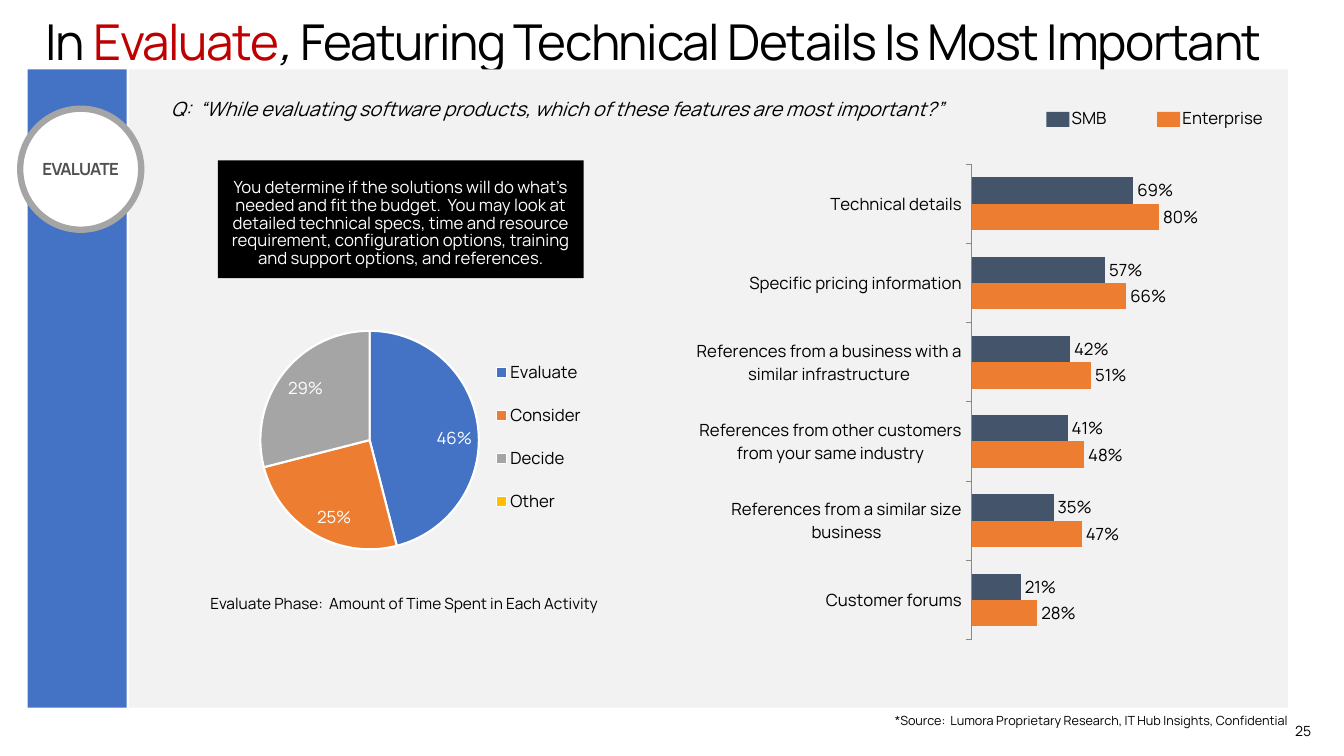
from lxml import etree
from pptx import Presentation, util as u
from pptx.chart.data import CategoryChartData
from pptx.dml.color import RGBColor
from pptx.enum import chart as c, shapes, text
from pptx.oxml.ns import qn

# Content
TITLE = [("In ", "black", False), ("Evaluate", "red", False), (", ", "black", True),
         ("Featuring Technical Details Is Most Important", "black", False)]
QUESTION = ("Q:  “While evaluating software products, "
            "which of these features are most important?”")
STAGE = "EVALUATE"
EXPLANATION = ("You determine if the solutions will do what's needed and fit the budget.  "
               "You may look at detailed technical specs, time and resource requirement, "
               "configuration options, training and support options, and references.")
CAPTION = "Evaluate Phase:  Amount of Time Spent in Each Activity"
SOURCE = "*Source:  Lumora Proprietary Research, IT Hub Insights, Confidential"
PAGE = "25"
FEATURES = [
    ("Technical details", 0.69, 0.80),
    ("Specific pricing information", 0.57, 0.66),
    ("References from a business with a similar infrastructure", 0.42, 0.51),
    ("References from other customers from your same industry", 0.41, 0.48),
    ("References from a similar size business", 0.35, 0.47),
    ("Customer forums", 0.21, 0.28),
]
AUDIENCES = [("SMB", "slate"), ("Enterprise", "orange")]
ACTIVITIES = [("Evaluate", 0.46, "blue"), ("Consider", 0.25, "orange"),
              ("Decide", 0.29, "grey"), ("Other", None, "gold")]


class Theme:
    font = "Manrope"
    colors = dict(black="000000", white="FFFFFF", red="C00000", panel="F2F2F2",
                  blue="4472C4", orange="ED7D31", grey="A5A5A5", gold="FFC000",
                  slate="44546A", badge="505050", axis="898989")
    title, question, body, caption, page, source = 35.3, 14, 12, 11, 10, 9

    @classmethod
    def color(cls, name):
        return RGBColor.from_string(cls.colors[name])


def style_font(font, size, color="black", bold=False, italic=False):
    font.name, font.size = Theme.font, u.Pt(size)
    font.bold, font.italic = bold, italic
    font.color.rgb = Theme.color(color)


def add_run(paragraph, words, size, color="black", bold=False, italic=False, spacing=None):
    run = paragraph.add_run()
    run.text = words
    style_font(run.font, size, color, bold, italic)
    if spacing is not None:
        run.font._element.set("spc", str(int(spacing * 100)))


def set_frame(frame, insets, anchor=text.MSO_ANCHOR.TOP, wrap=True):
    frame.auto_size = text.MSO_AUTO_SIZE.NONE
    frame.word_wrap, frame.vertical_anchor = wrap, anchor
    (frame.margin_left, frame.margin_top,
     frame.margin_right, frame.margin_bottom) = map(u.Cm, insets)
    return frame.paragraphs[0]


def add_block(slide, box, fill, kind=shapes.MSO_SHAPE.RECTANGLE):
    shape = slide.shapes.add_shape(kind, *map(u.Cm, box))
    shape.shadow.inherit = False
    shape.fill.solid()
    shape.fill.fore_color.rgb = Theme.color(fill)
    shape.line.fill.background()
    return shape


def add_text(slide, box, words, size, insets=(0.25, 0.13, 0.25, 0.13),
             anchor=text.MSO_ANCHOR.TOP, wrap=False, italic=False):
    shape = slide.shapes.add_textbox(*map(u.Cm, box))
    paragraph = set_frame(shape.text_frame, insets, anchor, wrap)
    add_run(paragraph, words, size, italic=italic)
    return paragraph


def place_layout(parent, index, box, inner=False):
    """Set a manual chart layout from fractions: left, top, width, height."""
    for old in parent.findall(qn("c:layout")):
        parent.remove(old)
    layout = etree.Element(qn("c:layout"))
    manual = etree.SubElement(layout, qn("c:manualLayout"))
    settings = [("layoutTarget", "inner")] if inner else []
    settings += [("xMode", "edge"), ("yMode", "edge"), *zip("xywh", box)]
    for tag, value in settings:
        etree.SubElement(manual, qn("c:" + tag)).set("val", str(value))
    parent.insert(index, layout)


def add_chart(slide, kind, box, categories, columns, plot_box, label_position, label_color):
    data = CategoryChartData(number_format="0%")
    data.categories = categories
    for name, values in columns:
        data.add_series(name, values)
    chart = slide.shapes.add_chart(kind, *map(u.Cm, box), data).chart
    chart.has_title = chart.has_legend = False
    style_font(chart.font, Theme.body)
    plot = chart.plots[0]
    plot.vary_by_categories = False
    plot.has_data_labels = True
    labels = plot.data_labels
    labels.show_value, labels.position = True, label_position
    labels.number_format, labels.number_format_is_linked = "0%", False
    style_font(labels.font, Theme.body, label_color)
    place_layout(chart._chartSpace.chart.plotArea, 0, plot_box, inner=True)
    return chart


def fill_format(target, color):
    target.format.fill.solid()
    target.format.fill.fore_color.rgb = Theme.color(color)


def add_feature_chart(slide):
    names, *values = zip(*FEATURES)
    columns = [(audience, column) for (audience, _), column in zip(AUDIENCES, values)]
    chart = add_chart(slide, c.XL_CHART_TYPE.BAR_CLUSTERED, (16.92, 2.9, 15.14, 13.77),
                      names, columns, (0.5, 0.09, 0.39, 0.87),
                      c.XL_LABEL_POSITION.OUTSIDE_END, "black")
    plot = chart.plots[0]
    plot.gap_width, plot.overlap = 100, 0
    for series, (_, color) in zip(plot.series, AUDIENCES):
        fill_format(series, color)
    values_axis, names_axis = chart.value_axis, chart.category_axis
    values_axis.minimum_scale, values_axis.maximum_scale = 0, 1
    values_axis.has_major_gridlines = values_axis.visible = False
    names_axis.reverse_order = True
    names_axis.major_tick_mark = c.XL_TICK_MARK.OUTSIDE
    names_axis.format.line.color.rgb = Theme.color("axis")
    names_axis.format.line.width = u.Pt(0.75)
    style_font(names_axis.tick_labels.font, Theme.body)


def add_activity_chart(slide):
    names, shares, colors = zip(*ACTIVITIES)
    chart = add_chart(slide, c.XL_CHART_TYPE.PIE, (4.9, 7.77, 10.39, 8.1),
                      names, [("Time spent", shares)], (0.16, 0.07, 0.53, 0.68),
                      c.XL_LABEL_POSITION.INSIDE_END, "white")
    chart.plots[0].vary_by_categories = True
    for index, color in enumerate(colors):
        point = chart.plots[0].series[0].points[index]
        fill_format(point, color)
        point.format.line.color.rgb = Theme.color("white")
        point.format.line.width = u.Pt(1.5)
    chart.has_legend = True
    legend = chart.legend
    legend.position = c.XL_LEGEND_POSITION.RIGHT
    legend.include_in_layout = False
    style_font(legend.font, Theme.body)
    place_layout(legend._element, 1, (0.71, 0.1, 0.25, 0.6))


def main():
    presentation = Presentation()
    presentation.slide_width, presentation.slide_height = u.Cm(33.87), u.Cm(19.05)
    slide = presentation.slides.add_slide(presentation.slide_layouts[5])

    # Background panel and side bar
    add_block(slide, (3.25, 1.75, 29.21, 16.08), "panel")
    add_block(slide, (0.7, 1.75, 2.49, 16.08), "blue")

    # Title
    title = slide.shapes.title
    title.left, title.top, title.width, title.height = map(u.Cm, (0.74, 0.2, 32.39, 2.49))
    paragraph = set_frame(title.text_frame, (0.41, 0.25, 0.41, 0.25))
    paragraph.alignment, paragraph.line_spacing = text.PP_ALIGN.LEFT, 0.9
    for words, color, italic in TITLE:
        add_run(paragraph, words, Theme.title, color, italic=italic, spacing=-1)

    # Feature chart with its key
    add_feature_chart(slide)
    for index, (audience, color) in enumerate(AUDIENCES):
        left = 26.37 + 2.79 * index
        add_block(slide, (left, 2.82, 0.58, 0.38), color)
        label = add_text(slide, (left + 0.13, 2.36, 3.23, 1.27), audience, Theme.body,
                         insets=(0.51, 0.41, 0.51, 0.41), wrap=True)
        label.line_spacing = 0.9

    # Stage badge
    badge = add_block(slide, (0.51, 2.74, 3.05, 3.05), "white", shapes.MSO_SHAPE.OVAL)
    badge.line.color.rgb, badge.line.width = Theme.color("grey"), u.Pt(4.5)
    paragraph = set_frame(badge.text_frame, (0, 0.03, 0, 0.03),
                          text.MSO_ANCHOR.MIDDLE, wrap=False)
    paragraph.alignment = text.PP_ALIGN.CENTER
    add_run(paragraph, STAGE, Theme.body, "badge", bold=True, spacing=-0.5)

    # Explanation
    box = add_block(slide, (5.49, 4.04, 9.22, 2.97), "black")
    paragraph = set_frame(box.text_frame, (0.25, 0.1, 0.25, 0.25), text.MSO_ANCHOR.BOTTOM)
    paragraph.alignment, paragraph.line_spacing = text.PP_ALIGN.CENTER, 0.88
    add_run(paragraph, EXPLANATION, Theme.body, "white")

    # Activity chart, question and notes
    add_activity_chart(slide)
    add_text(slide, (32.31, 18.11, 1.55, 0.61), PAGE, Theme.page,
             insets=(0.33, 0.18, 0.33, 0.18), anchor=text.MSO_ANCHOR.MIDDLE)
    add_text(slide, (22.3, 17.83, 10.13, 0.64), SOURCE, Theme.source)
    add_text(slide, (5.05, 14.83, 10.52, 0.74), CAPTION, Theme.caption)
    add_text(slide, (4.06, 2.31, 20.07, 0.86), QUESTION, Theme.question, italic=True)

    presentation.save("out.pptx")


if __name__ == "__main__":
    main()
